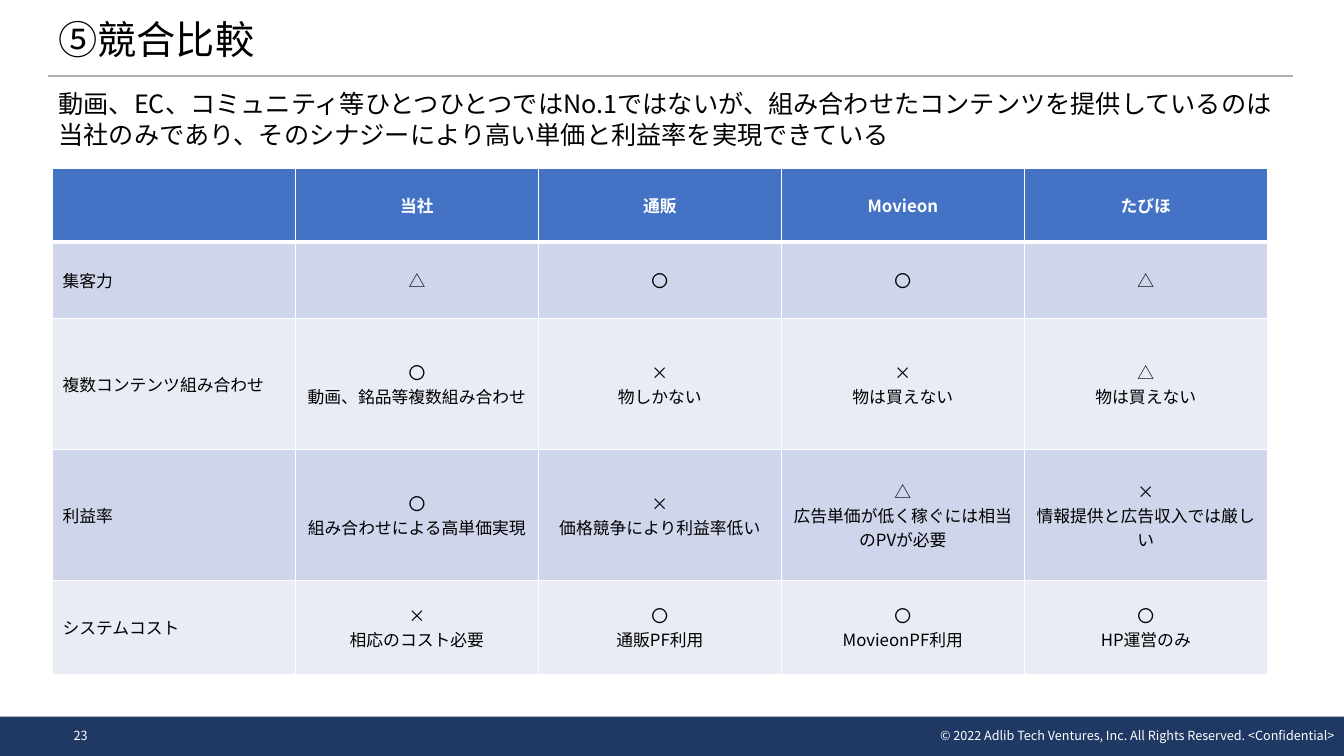
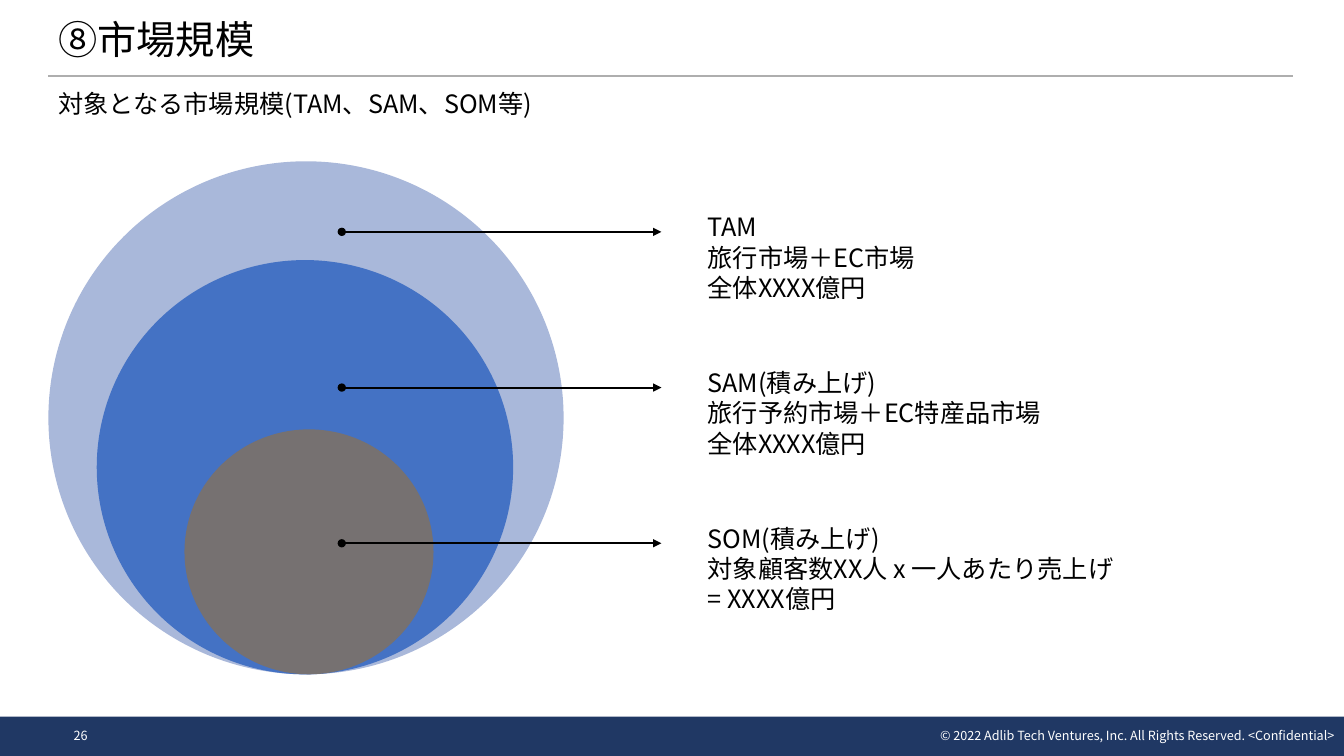
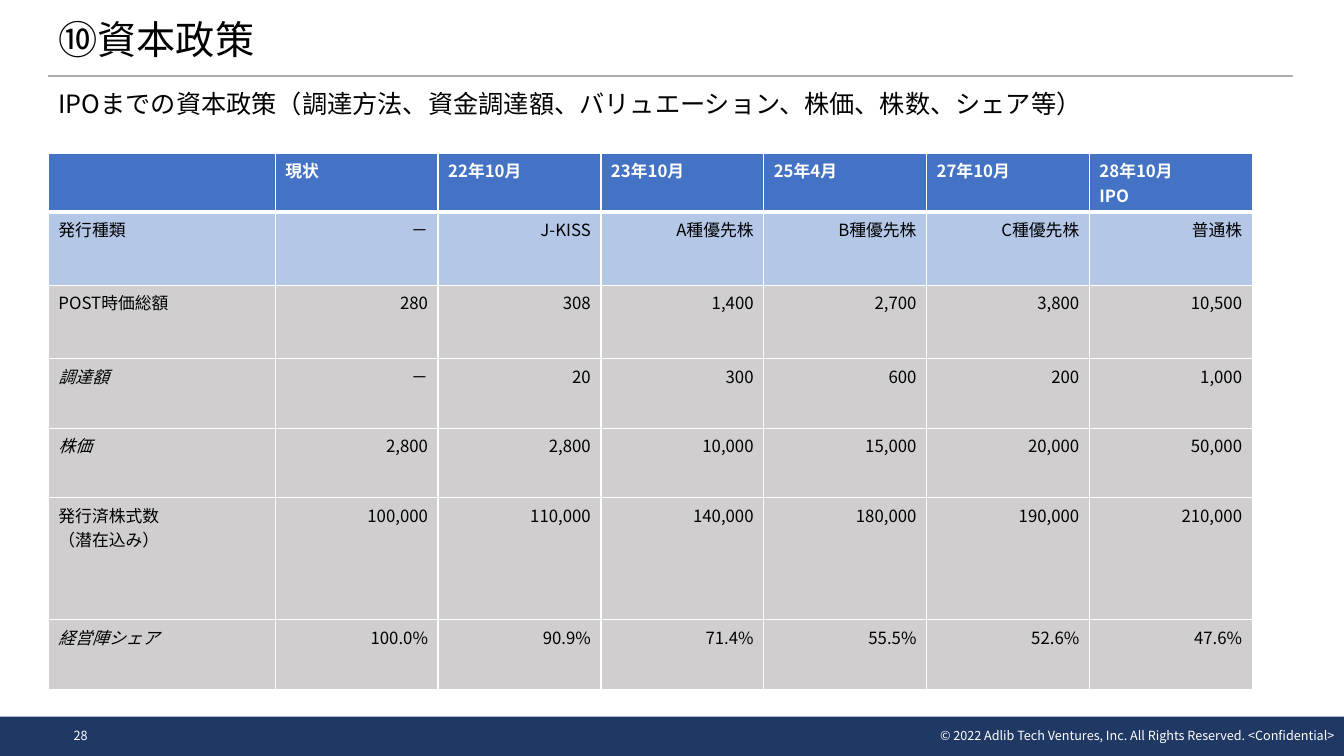
import pptx
import pptx.util
import pptx.dml.color
import pptx.enum.dml
import pptx.enum.shapes
import pptx.enum.text
import pptx.oxml
import pptx.oxml.ns

Inches = pptx.util.Inches
Pt = pptx.util.Pt
RGBColor = pptx.dml.color.RGBColor
ALIGN = pptx.enum.text.PP_ALIGN
ANCHOR = pptx.enum.text.MSO_ANCHOR
SHAPE = pptx.enum.shapes.MSO_SHAPE
STRAIGHT = pptx.enum.shapes.MSO_CONNECTOR.STRAIGHT

FONT = "Noto Sans CJK JP"
BLACK = RGBColor(0x00, 0x00, 0x00)
WHITE = RGBColor(0xFF, 0xFF, 0xFF)
NAVY = RGBColor(0x20, 0x38, 0x64)
RULE_GRAY = RGBColor(0xAE, 0xAE, 0xAE)
BLUE = RGBColor(0x44, 0x72, 0xC4)
PALE_BLUE = RGBColor(0xA9, 0xB8, 0xDA)
WARM_GRAY = RGBColor(0x76, 0x71, 0x71)
BAND_DARK = RGBColor(0xCF, 0xD5, 0xEA)
BAND_LIGHT = RGBColor(0xE9, 0xEB, 0xF5)
SKY = RGBColor(0xB4, 0xC7, 0xE7)
SILVER = RGBColor(0xD0, 0xCE, 0xCE)

WIDTH, HEIGHT = 13.33, 7.5
MARGIN = 0.48
CONTENT_WIDTH = 12.34
BODY_TOP = 0.81
BODY_LINE = Pt(21.6)
BODY_INSET = Inches(0.07)
COPYRIGHT = "© 2022 Adlib Tech Ventures, Inc. All Rights Reserved. <Confidential>"

COMPETITORS = {
    "number": 23,
    "title": "⑤競合比較",
    "lead": "動画、EC、コミュニティ等ひとつひとつではNo.1ではないが、組み合わせたコンテンツを"
            "提供しているのは当社のみであり、そのシナジーにより高い単価と利益率を実現できている",
    "rows": [
        ["", "当社", "通販", "Movieon", "たびほ"],
        ["集客力", "△", "〇", "〇", "△"],
        ["複数コンテンツ組み合わせ", "〇\n動画、銘品等複数組み合わせ", "×\n物しかない",
         "×\n物は買えない", "△\n物は買えない"],
        ["利益率", "〇\n組み合わせによる高単価実現", "×\n価格競争により利益率低い",
         "△\n広告単価が低く稼ぐには相当のPVが必要", "×\n情報提供と広告収入では厳しい"],
        ["システムコスト", "×\n相応のコスト必要", "〇\n通販PF利用", "〇\nMovieonPF利用",
         "〇\nHP運営のみ"],
    ],
    "heights": [0.73, 0.76, 1.3, 1.3, 0.93],
    "fills": [BLUE, BAND_DARK, BAND_LIGHT, BAND_DARK, BAND_LIGHT],
}

MARKET = {
    "number": 26,
    "title": "⑧市場規模",
    "lead": "対象となる市場規模(TAM、SAM、SOM等)",
    "circles": [
        (MARGIN, 5.11, 5.09, PALE_BLUE),
        (0.96, 4.13, 4.11, BLUE),
        (1.83, 2.47, 2.43, WARM_GRAY),
    ],
    "labels": [
        "TAM\n旅行市場＋EC市場\n全体XXXX億円",
        "SAM(積み上げ)\n旅行予約市場＋EC特産品市場\n全体XXXX億円",
        "SOM(積み上げ)\n対象顧客数XX人 x 一人あたり売上げ\n= XXXX億円",
    ],
}

CAPITAL = {
    "number": 28,
    "title": "⑩資本政策",
    "lead": "IPOまでの資本政策（調達方法、資金調達額、バリュエーション、株価、株数、シェア等）",
    "rows": [
        ["", "現状", "22年10月", "23年10月", "25年4月", "27年10月", "28年10月\nIPO"],
        ["発行種類", "－", "J-KISS", "A種優先株", "B種優先株", "C種優先株", "普通株"],
        ["POST時価総額", "280", "308", "1,400", "2,700", "3,800", "10,500"],
        ["調達額", "－", "20", "300", "600", "200", "1,000"],
        ["株価", "2,800", "2,800", "10,000", "15,000", "20,000", "50,000"],
        ["発行済株式数\n（潜在込み）", "100,000", "110,000", "140,000", "180,000", "190,000",
         "210,000"],
        ["経営陣シェア", "100.0%", "90.9%", "71.4%", "55.5%", "52.6%", "47.6%"],
    ],
    "heights": [0.58, 0.73, 0.73, 0.69, 0.69, 1.21, 0.69],
    "fills": [BLUE, SKY] + [SILVER] * 5,
    "italic_rows": {3, 4, 6},
}


def box(left, top, width, height):
    return [Inches(value) for value in (left, top, width, height)]


def write(text_frame, text, size, color=BLACK, align=ALIGN.LEFT, line_spacing=None,
          bold=False, italic=False):
    text_frame.text = text
    for paragraph in text_frame.paragraphs:
        paragraph.alignment = align
        paragraph.space_before = Pt(0)
        paragraph.line_spacing = line_spacing
        for run in paragraph.runs:
            run.font.name = FONT
            run.font.size = Pt(size)
            run.font.color.rgb = color
            run.font.bold = bold
            run.font.italic = italic
            east_asian = pptx.oxml.parse_xml(
                f'<a:ea {pptx.oxml.ns.nsdecls("a")} typeface="{FONT}"/>')
            run.font._element.find(pptx.oxml.ns.qn("a:latin")).addnext(east_asian)


def add_text(slide, place, text, size, anchor=ANCHOR.TOP, inset=Inches(0.05), **style):
    text_frame = slide.shapes.add_textbox(*box(*place)).text_frame
    text_frame.word_wrap = True
    text_frame.vertical_anchor = anchor
    text_frame.margin_top = inset
    write(text_frame, text, size, **style)


def add_filled(slide, preset, place, color):
    shape = slide.shapes.add_shape(preset, *box(*place))
    shape.shadow.inherit = False
    shape.fill.solid()
    shape.fill.fore_color.rgb = color
    shape.line.fill.background()
    return shape


def add_line(slide, left, right, y, color, arrow=False):
    connector = slide.shapes.add_connector(STRAIGHT, *box(left, y, right, y))
    connector.line.color.rgb = color
    connector.line.width = Pt(1.5)
    namespace = pptx.oxml.ns.nsdecls("a")
    if arrow:
        line = connector.line._get_or_add_ln()
        line.append(pptx.oxml.parse_xml(f'<a:headEnd {namespace} type="oval"/>'))
        line.append(pptx.oxml.parse_xml(f'<a:tailEnd {namespace} type="triangle"/>'))
    connector.element.spPr.append(pptx.oxml.parse_xml(f"<a:effectLst {namespace}/>"))
    return connector


def prepare_layout(layout):
    places = {0: (MARGIN, 0.13, 9.94, 0.57), 1: (MARGIN, BODY_TOP, CONTENT_WIDTH, 6.13)}
    for placeholder in layout.placeholders:
        index = placeholder.placeholder_format.idx
        if index in places:
            (placeholder.left, placeholder.top,
             placeholder.width, placeholder.height) = box(*places[index])


def decorate_master(presentation, slide):
    band = add_filled(slide, SHAPE.RECTANGLE, (0, 7.11, WIDTH, 0.39), NAVY)
    rule = add_line(slide, MARGIN, MARGIN + CONTENT_WIDTH, 0.75, RULE_GRAY)
    tree = presentation.slide_master.element.cSld.spTree
    for position, shape in enumerate((band, rule)):
        shape.element.xpath(".//p:cNvPr")[0].set("id", str(20 + position))
        tree.insert(2 + position, shape.element)


def add_slide(presentation, content):
    slide = presentation.slides.add_slide(presentation.slide_layouts[1])
    if len(presentation.slides) == 1:
        decorate_master(presentation, slide)
    title = slide.shapes.title.text_frame
    title.auto_size = pptx.enum.text.MSO_AUTO_SIZE.NONE
    title.vertical_anchor = ANCHOR.MIDDLE
    write(title, content["title"], 28, line_spacing=0.9)
    body = slide.placeholders[1].text_frame
    body.auto_size = pptx.enum.text.MSO_AUTO_SIZE.NONE
    body.margin_top = BODY_INSET
    write(body, content["lead"], 18, line_spacing=BODY_LINE)
    properties = body.paragraphs[0]._p.get_or_add_pPr()
    properties.set("marL", "0")
    properties.set("indent", "0")
    properties.append(pptx.oxml.parse_xml(f'<a:buNone {pptx.oxml.ns.nsdecls("a")}/>'))
    footer = {"size": 9, "anchor": ANCHOR.MIDDLE, "color": WHITE}
    add_text(slide, (MARGIN, 7.1, 0.64, 0.4), str(content["number"]),
             align=ALIGN.CENTER, **footer)
    add_text(slide, (7.07, 7.1, WIDTH - 7.07, 0.4), COPYRIGHT, align=ALIGN.RIGHT, **footer)
    return slide


def set_borders(cell, top, bottom):
    properties = cell._tc.get_or_add_tcPr()
    for position, (side, points) in enumerate(
            (("lnL", 1), ("lnR", 1), ("lnT", top), ("lnB", bottom))):
        properties.insert(position, pptx.oxml.parse_xml(
            f'<a:{side} {pptx.oxml.ns.nsdecls("a")} w="{Pt(points)}">'
            f'<a:solidFill><a:srgbClr val="{WHITE}"/></a:solidFill></a:{side}>'))


def add_table(slide, content, left, top, widths, anchor, header_align, value_align):
    rows, heights = content["rows"], content["heights"]
    table = slide.shapes.add_table(
        len(rows), len(widths), *box(left, top, sum(widths), sum(heights))).table
    for column, width in zip(table.columns, widths):
        column.width = Inches(width)
    for row, height in zip(table.rows, heights):
        row.height = Inches(height)
    for i, texts in enumerate(rows):
        for j, text in enumerate(texts):
            header = i == 0
            cell = table.cell(i, j)
            cell.vertical_anchor = anchor
            cell.fill.solid()
            cell.fill.fore_color.rgb = content["fills"][i]
            set_borders(cell, 3 if i == 1 else 1, 3 if header else 1)
            align = header_align if header else value_align if j else ALIGN.LEFT
            write(cell.text_frame, text, 12, WHITE if header else BLACK, align, bold=header,
                  italic=j == 0 and i in content.get("italic_rows", ()))


def add_market_diagram(slide):
    bottom, first_arrow, step = 6.69, 2.3, 1.545
    for left, width, height, color in MARKET["circles"]:
        add_filled(slide, SHAPE.OVAL, (left, bottom - height, width, height), color)
    for i, label in enumerate(MARKET["labels"]):
        y = first_arrow + i * step
        add_line(slide, 3.39, 6.56, y, BLACK, arrow=True)
        add_text(slide, (6.92, y - 0.27, 5.9, 1.26), label, 18,
                 inset=BODY_INSET, line_spacing=BODY_LINE)


def main():
    presentation = pptx.Presentation()
    presentation.slide_width = Inches(WIDTH)
    presentation.slide_height = Inches(HEIGHT)
    prepare_layout(presentation.slide_layouts[1])
    add_table(add_slide(presentation, COMPETITORS), COMPETITORS, 0.52, 1.67, [2.41] * 5,
              ANCHOR.MIDDLE, ALIGN.CENTER, ALIGN.CENTER)
    add_market_diagram(add_slide(presentation, MARKET))
    add_table(add_slide(presentation, CAPITAL), CAPITAL, MARGIN, 1.52, [2.25] + [1.615] * 6,
              ANCHOR.TOP, ALIGN.LEFT, ALIGN.RIGHT)
    presentation.save("out.pptx")


if __name__ == "__main__":
    main()
